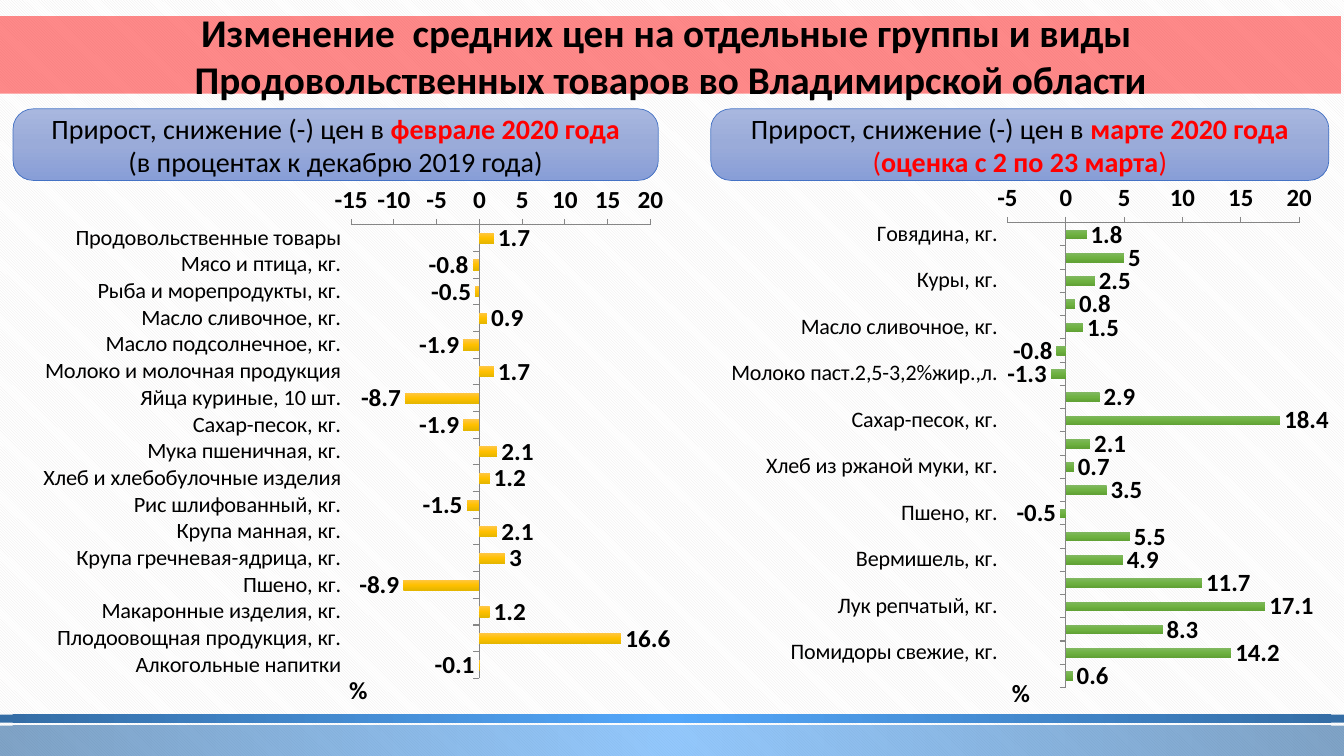
from dataclasses import dataclass

from pptx import Presentation
from pptx.chart.data import CategoryChartData
from pptx.dml.color import RGBColor
from pptx.enum import chart as ch, dml, shapes, text
from pptx.oxml import parse_xml
from pptx.oxml.ns import nsdecls, qn
from pptx.util import Inches, Pt


@dataclass(frozen=True)
class Theme:
    """Colours, font and type sizes of the slide."""
    font: str = "Calibri"
    black: str = "000000"
    red: str = "FF0000"
    stripe: str = "E9E7E7"
    white: str = "FFFFFF"
    edge: str = "4472C4"
    axis: str = "868686"
    blue: tuple = ("2A93FB", "034A90")
    head: tuple = ("A8B7DF", "9AABD9", "889ED7")
    gold: tuple = ("FFC746", "FFC000", "E5B600")
    green: tuple = ("81B861", "6FB242", "61A235")
    title: int = 28
    label: int = 20
    value: int = 18
    name: int = 16


T = Theme()

FEB = [
    ("Продовольственные товары", 1.7), ("Мясо и птица, кг.", -0.8),
    ("Рыба и морепродукты, кг.", -0.5), ("Масло сливочное, кг.", 0.9),
    ("Масло подсолнечное, кг.", -1.9), ("Молоко и молочная продукция", 1.7),
    ("Яйца куриные, 10 шт.", -8.7), ("Сахар-песок, кг.", -1.9),
    ("Мука пшеничная, кг.", 2.1), ("Хлеб и хлебобулочные изделия", 1.2),
    ("Рис шлифованный, кг.", -1.5), ("Крупа манная, кг.", 2.1),
    ("Крупа гречневая-ядрица, кг.", 3), ("Пшено, кг.", -8.9),
    ("Макаронные изделия, кг.", 1.2), ("Плодоовощная продукция, кг.", 16.6),
    ("Алкогольные напитки", -0.1),
]
MARCH = [
    ("Говядина, кг.", 1.8), ("Свинина, кг.", 5), ("Куры, кг.", 2.5),
    ("Рыба мороженая, кг.", 0.8), ("Масло сливочное, кг.", 1.5),
    ("Масло подсолнечное, кг.", -0.8), ("Молоко паст.2,5-3,2%жир.,л.", -1.3),
    ("Яйца куриные, 10 шт.", 2.9), ("Сахар-песок, кг.", 18.4),
    ("Мука пшеничная, кг.", 2.1), ("Хлеб из ржаной муки, кг.", 0.7),
    ("Рис шлифованный, кг.", 3.5), ("Пшено, кг.", -0.5),
    ("Крупа гречневая, кг.", 5.5), ("Вермишель, кг.", 4.9),
    ("Картофель, кг.", 11.7), ("Лук репчатый, кг.", 17.1),
    ("Морковь, кг.", 8.3), ("Помидоры свежие, кг.", 14.2),
    ("Водка креп. 40%, л.", 0.6),
]


def rgb(code):
    """Turn a hex code into a colour."""
    return RGBColor.from_string(code)


def style(font, size, bold=False, color=T.black):
    """Set face, size, weight and colour of a font."""
    font.name, font.size, font.bold = T.font, Pt(size), bold
    font.color.rgb = rgb(color)


def blend(fill, props, codes, alpha=100, ring=False):
    """Fill with evenly spaced colours, downwards or in a ring."""
    fill.background()
    step = 100000 // (len(codes) - 1)
    stops = "".join(
        f'<a:gs pos="{i * step}"><a:srgbClr val="{code}">'
        f'<a:alpha val="{alpha * 1000}"/></a:srgbClr></a:gs>'
        for i, code in enumerate(codes))
    way = '<a:lin ang="5400000" scaled="0"/>'
    if ring:
        way = ('<a:path path="circle"><a:fillToRect l="50000" t="50000" '
               'r="50000" b="50000"/></a:path>')
    node = parse_xml(f'<a:gradFill {nsdecls("a")} rotWithShape="1">'
                     f'<a:gsLst>{stops}</a:gsLst>{way}</a:gradFill>')
    blank = props.find(qn("a:noFill"))
    props.replace(blank, node)


def block(slide, kind, box, codes, alpha=100, ring=False):
    """Add a blended shape without outline or shadow."""
    shape = slide.shapes.add_shape(kind, *map(Inches, box))
    shape.shadow.inherit = False
    blend(shape.fill, shape._element.spPr, codes, alpha, ring)
    shape.line.fill.background()
    return shape


def banner(slide, lines):
    """Place the title on its translucent red band."""
    title = slide.shapes.title
    title.left, title.top = Inches(0), Inches(0.16)
    title.width, title.height = Inches(13.3), Inches(0.77)
    title.fill.solid()
    title.fill.fore_color.rgb = rgb(T.red)
    color = title._element.spPr.find(".//" + qn("a:srgbClr"))
    color.append(parse_xml(f'<a:alpha {nsdecls("a")} val="46000"/>'))
    frame = title.text_frame
    frame.text = "\n".join(lines)
    frame.auto_size = text.MSO_AUTO_SIZE.NONE
    frame.vertical_anchor = text.MSO_ANCHOR.MIDDLE
    for par in frame.paragraphs:
        par.alignment = text.PP_ALIGN.CENTER
        par.line_spacing, par.space_before = 1.0, Pt(0)
        style(par.font, T.title, True)


def head(slide, box, lines):
    """Add a rounded heading; each run is words, colour and weight."""
    shape = block(slide, shapes.MSO_SHAPE.ROUNDED_RECTANGLE, box, T.head)
    shape.adjustments[0] = 0.28
    shape.line.color.rgb = rgb(T.edge)
    shape.line.width = Pt(0.5)
    frame = shape.text_frame
    frame.vertical_anchor = text.MSO_ANCHOR.MIDDLE
    for i, runs in enumerate(lines):
        par = frame.add_paragraph() if i else frame.paragraphs[0]
        par.alignment = text.PP_ALIGN.CENTER
        for words, color, bold in runs:
            run = par.add_run()
            run.text = words
            style(run.font, T.label, bold, color)


def pin(node, spot, inner=False):
    """Give a plot or an axis title a fixed place in its chart."""
    for old in node.findall(qn("c:layout")):
        node.remove(old)
    parts = '<c:layoutTarget val="inner"/>' if inner else ""
    parts += '<c:xMode val="edge"/><c:yMode val="edge"/>'
    parts += "".join(f'<c:{key} val="{val}"/>' for key, val in zip("xywh", spot))
    lay = parse_xml(f'<c:layout {nsdecls("c")}><c:manualLayout>{parts}'
                    '</c:manualLayout></c:layout>')
    node.insert(0 if inner else 1, lay)


def bars(slide, box, rows, codes, low, plot, unit):
    """Add a bar chart of price changes, first item on top."""
    data = CategoryChartData()
    data.categories = [name for name, _ in rows]
    data.add_series("Series 1", [val for _, val in rows])
    chart = slide.shapes.add_chart(
        ch.XL_CHART_TYPE.BAR_CLUSTERED, *map(Inches, box), data).chart
    chart.has_legend = chart.has_title = False
    style(chart.font, T.value)
    pin(chart._chartSpace.chart.plotArea, plot, True)

    group = chart.plots[0]
    group.gap_width, group.vary_by_categories = 150, False
    group.has_data_labels = True
    tags = group.data_labels
    tags.show_value = True
    tags.position = ch.XL_LABEL_POSITION.OUTSIDE_END
    style(tags.font, T.value, True)
    series = group.series[0]
    series.invert_if_negative = False
    blend(series.format.fill, series._element.get_or_add_spPr(), codes)

    cats, vals = chart.category_axis, chart.value_axis
    cats.reverse_order = True
    cats.tick_label_position = ch.XL_TICK_LABEL_POSITION.LOW
    vals.minimum_scale, vals.maximum_scale, vals.major_unit = low, 20, 5
    for axis, size, bold in ((cats, T.name, False), (vals, T.value, True)):
        axis.has_major_gridlines = False
        axis.major_tick_mark = ch.XL_TICK_MARK.OUTSIDE
        axis.format.line.color.rgb = rgb(T.axis)
        style(axis.tick_labels.font, size, bold)
    title = vals.axis_title
    title.text_frame.text = "%"
    style(title.text_frame.paragraphs[0].font, T.value, True)
    pin(title._element, unit)


def main():
    """Build the slide and save it."""
    deck = Presentation()
    deck.slide_width, deck.slide_height = Inches(13.33), Inches(7.5)
    slide = deck.slides.add_slide(deck.slide_layouts[5])
    back = slide.background.fill
    back.patterned()
    back.pattern = dml.MSO_PATTERN.DARK_DOWNWARD_DIAGONAL
    back.fore_color.rgb, back.back_color.rgb = rgb(T.stripe), rgb(T.white)
    for top, high, alpha in ((7.2, 0.3, 50), (7.09, 0.08, 80)):
        block(slide, shapes.MSO_SHAPE.RECTANGLE, (0, top, 13.33, high),
              T.blue, alpha, True)
    banner(slide, ("Изменение  средних цен на отдельные группы и виды ",
                   "Продовольственных товаров во Владимирской области"))
    lead = ("Прирост, снижение (-) цен в ", T.black, False)
    head(slide, (0.13, 1.08, 6.4, 0.71), (
        (lead, ("феврале 2020 года", T.red, True)),
        (("(в процентах к декабрю 2019 года)", T.black, False),)))
    bars(slide, (0.19, 1.82, 6.46, 5.25), FEB, T.gold, -15,
         (0.51, 0.08, 0.46, 0.88), (0.5, 0.94))
    head(slide, (7.05, 1.08, 6.13, 0.71), (
        (lead, ("марте 2020 года", T.red, True)),
        (("(", T.red, False), ("оценка c 2 по 23 марта", T.red, True),
         (")", T.red, False))))
    bars(slide, (6.65, 1.79, 6.53, 5.32), MARCH, T.green, -5,
         (0.52, 0.08, 0.45, 0.88), (0.52, 0.93))
    deck.save("out.pptx")


if __name__ == "__main__":
    main()
